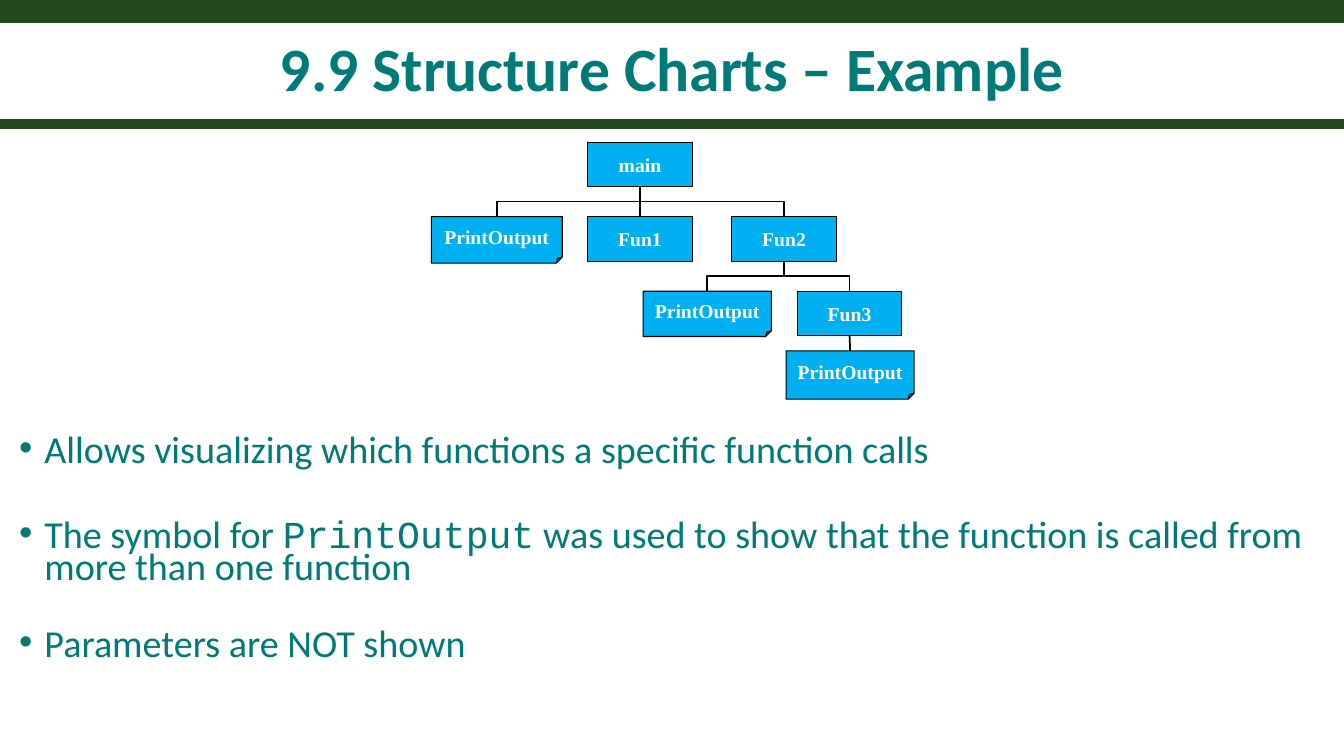
from dataclasses import dataclass

from lxml.etree import SubElement
from pptx import Presentation
from pptx.dml.color import RGBColor as RGB
from pptx.enum.shapes import MSO_CONNECTOR as CXN, MSO_SHAPE as SHAPE
from pptx.enum.text import MSO_ANCHOR as ANCHOR, PP_ALIGN as ALIGN
from pptx.oxml.ns import qn
from pptx.util import Cm, Pt


@dataclass(frozen=True)
class Theme:
    bar: RGB = RGB(0x24, 0x49, 0x1F)
    teal: RGB = RGB(0x00, 0x7A, 0x77)
    node: RGB = RGB(0x00, 0xB0, 0xF0)
    white: RGB = RGB(0xFF, 0xFF, 0xFF)
    black: RGB = RGB(0x00, 0x00, 0x00)
    font: str = "Calibri"
    code_font: str = "Courier New"
    node_font: str = "Times New Roman"
    title_size: float = 44
    body_size: float = 27.2
    node_size: float = 14


THEME = Theme()
LEFT, WIDTH = 0.23, 33.43

# Nodes of the chart: label, left, top, width, height in cm
BOX_W, BOX_H = 2.64, 1.12
ROWS = (3.58, 5.46, 7.34, 8.84)
NODES = {
    "main": ("main", 14.81, ROWS[0], BOX_W, BOX_H),
    "print1": ("PrintOutput", 10.87, ROWS[1], 3.3, 1.17),
    "fun1": ("Fun1", 14.81, ROWS[1], BOX_W, BOX_H),
    "fun2": ("Fun2", 18.44, ROWS[1], BOX_W, BOX_H),
    "print2": ("PrintOutput", 16.21, ROWS[2], 3.23, 1.14),
    "fun3": ("Fun3", 20.09, ROWS[2], BOX_W, BOX_H),
    "print3": ("PrintOutput", 19.81, ROWS[3], 3.23, 1.22),
}
CALLS = (
    ("main", "print1"), ("main", "fun1"), ("main", "fun2"),
    ("fun2", "print2"), ("fun2", "fun3"), ("fun3", "print3"),
)

# Bullets: space before in points, text runs as (text, is code)
BULLETS = (
    (0, [("Allows visualizing which functions a specific function calls", False)]),
    (37.5, [("The symbol for ", False), ("PrintOutput", True),
            (" was used to show that the function is called from more than one function", False)]),
    (32.5, [("Parameters are NOT shown", False)]),
)


def style(font, name, size, color, bold=False):
    font.name, font.size, font.bold = name, Pt(size), bold
    font.color.rgb = color


def add_line(s, kind, x1, y1, x2, y2, color, weight):
    line = s.shapes.add_connector(kind, x1, y1, x2, y2)
    line.line.color.rgb = color
    line.line.width = Pt(weight)
    SubElement(line._element.spPr, qn("a:effectLst"))
    return line


def add_text_frame(s, top, height):
    tf = s.shapes.add_textbox(Cm(LEFT), Cm(top), Cm(WIDTH), Cm(height)).text_frame
    tf.word_wrap = True
    return tf


def add_title(s, text):
    tf = add_text_frame(s, 0.64, 2.31)
    tf.vertical_anchor = ANCHOR.MIDDLE
    p = tf.paragraphs[0]
    p.text = text
    p.alignment = ALIGN.CENTER
    p.line_spacing = 0.9
    style(p.runs[0].font, THEME.font, THEME.title_size, THEME.teal, True)


def add_bullets(s, bullets):
    tf = add_text_frame(s, 10.92, 6.23)
    for i, (space, parts) in enumerate(bullets):
        p = tf.paragraphs[0] if i == 0 else tf.add_paragraph()
        p.line_spacing = 0.7
        p.space_before = Pt(space)
        pPr = p._p.get_or_add_pPr()
        pPr.set("marL", str(Cm(0.64)))
        pPr.set("indent", str(-Cm(0.64)))
        SubElement(pPr, qn("a:buFont")).set("typeface", "Arial")
        SubElement(pPr, qn("a:buChar")).set("char", "•")
        for text, is_code in parts:
            r = p.add_run()
            r.text = text
            name = THEME.code_font if is_code else THEME.font
            style(r.font, name, THEME.body_size, THEME.teal)


def add_node(s, label, left, top, width, height):
    shared = label == "PrintOutput"
    kind = SHAPE.FOLDED_CORNER if shared else SHAPE.RECTANGLE
    sp = s.shapes.add_shape(kind, Cm(left), Cm(top), Cm(width), Cm(height))
    if shared:
        # Size of the folded corner, which has no public adjustment
        fold = SubElement(sp._element.spPr.find(".//" + qn("a:avLst")), qn("a:gd"))
        fold.set("name", "adj")
        fold.set("fmla", "val 12500")
    sp.shadow.inherit = False
    sp.fill.solid()
    sp.fill.fore_color.rgb = THEME.node
    sp.line.color.rgb = THEME.black
    sp.line.width = Pt(0.75)
    tf = sp.text_frame
    tf.word_wrap = False
    tf.vertical_anchor = ANCHOR.MIDDLE
    p = tf.paragraphs[0]
    p.text = label
    p.alignment = ALIGN.CENTER
    style(p.runs[0].font, THEME.node_font, THEME.node_size, THEME.white, True)
    return sp


def add_call(s, caller, callee):
    """Join the bottom of the caller to the top of the callee."""
    x1, y1 = caller.left + caller.width // 2, caller.top + caller.height
    x2, y2 = callee.left + callee.width // 2, callee.top
    if abs(x2 - x1) < Cm(0.1):
        add_line(s, CXN.STRAIGHT, x1, y1, x2, y2, THEME.black, 1.25)
        return
    # An elbow that leaves downwards is a sideways one turned by a quarter
    cx, cy = (x1 + x2) // 2, (y1 + y2) // 2
    dx, dy = abs(x2 - x1) // 2, (y2 - y1) // 2
    elbow = add_line(s, CXN.ELBOW, cx - dy, cy - dx, cx + dy, cy + dx, THEME.black, 1.25)
    xfrm = elbow._element.spPr.find(qn("a:xfrm"))
    turn = 90 if x2 < x1 else 270
    xfrm.set("rot", str(turn * 60000))
    if turn == 270:
        xfrm.set("flipH", "1")


def main():
    prs = Presentation()
    prs.slide_width, prs.slide_height = Cm(33.87), Cm(19.05)
    s = prs.slides.add_slide(prs.slide_layouts[6])

    # Title between two bars
    for y, weight in ((0.28, 16.5), (3.13, 7.5)):
        add_line(s, CXN.STRAIGHT, 0, Cm(y), prs.slide_width, Cm(y), THEME.bar, weight)
    add_title(s, "9.9 Structure Charts – Example")

    # Explanation
    add_bullets(s, BULLETS)

    # Structure chart
    nodes = {key: add_node(s, *node) for key, node in NODES.items()}
    for caller, callee in CALLS:
        add_call(s, nodes[caller], nodes[callee])

    prs.save("out.pptx")


if __name__ == "__main__":
    main()
